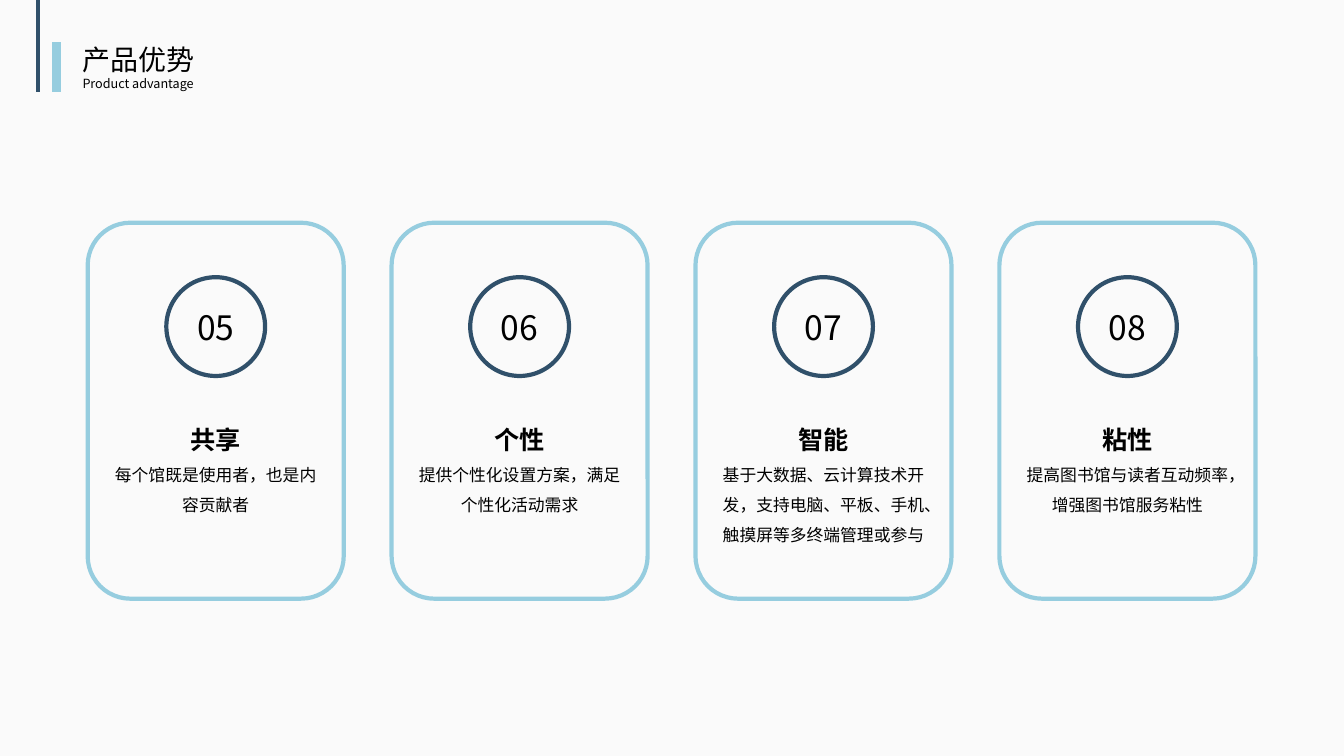
import pptx
import pptx.dml.color
import pptx.enum.dml
import pptx.enum.shapes
import pptx.enum.text
import pptx.oxml.ns
import pptx.util
from dataclasses import dataclass
from lxml import etree

SHAPE = pptx.enum.shapes.MSO_SHAPE
ALIGN = pptx.enum.text.PP_ALIGN


@dataclass(frozen=True)
class Theme:
    font: str = "Noto Sans CJK SC"
    paper: str = "FAFAFA"
    ink: str = "000000"
    navy: str = "30506A"
    sky: str = "96CDDF"
    number: int = 24
    title: int = 20
    heading: int = 18
    body: int = 12
    subtitle: int = 9
    outline: int = 3
    accent: int = 7


class Deck:
    """Draws on a grid of 160 columns by 90 rows."""

    def __init__(self, theme):
        self.theme = theme
        self.file = pptx.Presentation()
        self.file.slide_width = self.grid(160)
        self.file.slide_height = self.grid(90)
        self.slide = self.file.slides.add_slide(self.file.slide_layouts[6])
        fill = self.slide.background.fill
        fill.solid()
        fill.fore_color.rgb = self.color(theme.paper)

    def grid(self, units):
        return pptx.util.Inches(units / 12)

    def color(self, code):
        return pptx.dml.color.RGBColor.from_string(code)

    def stroke(self, item, color, width):
        item.line.color.rgb = self.color(color)
        item.line.width = pptx.util.Pt(width)

    def rule(self, column, top, bottom, color, width):
        rule = self.slide.shapes.add_connector(
            pptx.enum.shapes.MSO_CONNECTOR.STRAIGHT,
            *map(self.grid, (column, top, column, bottom)))
        self.stroke(rule, color, width)
        etree.SubElement(rule._element.spPr, pptx.oxml.ns.qn("a:effectLst"))

    def group(self):
        return self.slide.shapes.add_group_shape().shapes

    def outline(self, parent, preset, box, color):
        shape = parent.add_shape(preset, *map(self.grid, box))
        shape.shadow.inherit = False
        shape.fill.background()
        self.stroke(shape, color, self.theme.outline)
        return shape

    def add_lines(self, frame, lines, align, spacing=None):
        """Each line is (text, size, bold) and becomes one paragraph."""
        for index, (text, size, bold) in enumerate(lines):
            paragraph = frame.add_paragraph() if index else frame.paragraphs[0]
            paragraph.alignment = align
            paragraph.line_spacing = spacing
            run = paragraph.add_run()
            run.text = text
            run.font.size = pptx.util.Pt(size)
            run.font.bold = bold
            run.font.name = self.theme.font
            run.font.color.rgb = self.color(self.theme.ink)
            east_asian = etree.SubElement(run.font._element, pptx.oxml.ns.qn("a:ea"))
            east_asian.set("typeface", self.theme.font)

    def text(self, parent, box, lines, align, spacing=None):
        frame = parent.add_textbox(*map(self.grid, box)).text_frame
        frame.word_wrap = True
        frame.auto_size = pptx.enum.text.MSO_AUTO_SIZE.SHAPE_TO_FIT_TEXT
        self.add_lines(frame, lines, align, spacing)

    def card(self, left, number, heading, body, body_lines):
        theme, card = self.theme, self.group()
        width, circle, text_width = 30.48, 11.76, 26.64
        self.outline(card, SHAPE.ROUNDED_RECTANGLE,
                     (left, 26.52, width, 44.76), theme.sky)

        # Numbered circle
        badge = self.outline(card, SHAPE.OVAL,
                             (left + (width - circle) / 2, 33, circle, circle),
                             theme.navy)
        badge.text_frame.vertical_anchor = pptx.enum.text.MSO_ANCHOR.MIDDLE
        self.add_lines(badge.text_frame, [(number, theme.number, False)], ALIGN.CENTER)

        # Heading and description
        self.text(card, (left + (width - text_width) / 2, 48.12,
                         text_width, 6.72 + 3.6 * body_lines),
                  [(heading, theme.heading, True), (body, theme.body, False)],
                  ALIGN.CENTER, 1.5)


ADVANTAGES = [
    ("共享", "每个馆既是使用者，也是内容贡献者", 2),
    ("个性", "提供个性化设置方案，满足个性化活动需求", 2),
    ("智能", "基于大数据、云计算技术开发，支持电脑、平板、手机、触摸屏等多终端管理或参与", 3),
    ("粘性", "提高图书馆与读者互动频率，增强图书馆服务粘性", 2),
]


def main():
    theme = Theme()
    deck = Deck(theme)

    # Title marks
    deck.rule(4.56, 0, 10.92, theme.navy, theme.outline)
    deck.rule(6.72, 5.04, 10.92, theme.sky, theme.accent)

    # Advantage cards
    for index, (heading, body, body_lines) in enumerate(ADVANTAGES):
        deck.card(10.44 + 36.18 * index, f"{index + 5:02}", heading, body, body_lines)

    # Title
    deck.text(deck.slide.shapes, (8.64, 4.44, 18.12, 7.08),
              [("产品优势", theme.title, False),
               ("Product advantage", theme.subtitle, False)], ALIGN.JUSTIFY)

    deck.file.save("out.pptx")


if __name__ == "__main__":
    main()
